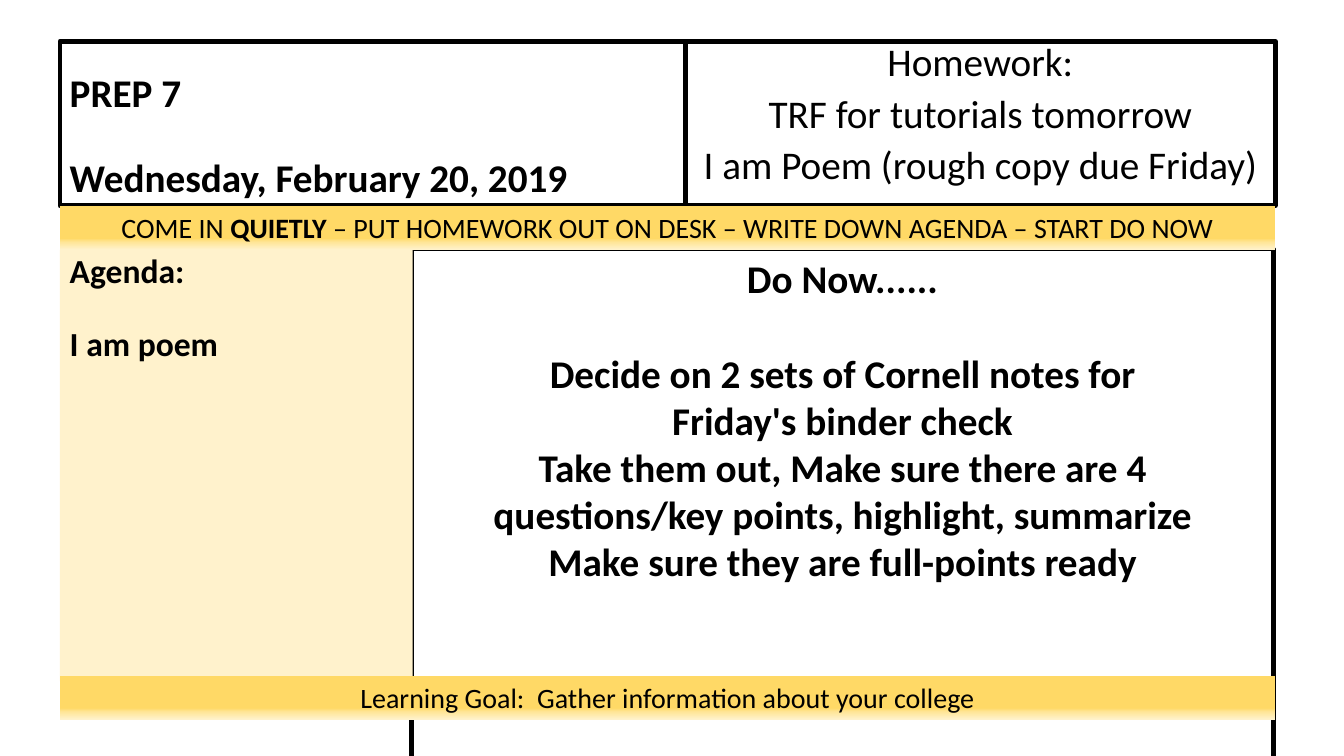
from lxml import etree
from pptx import Presentation
from pptx.dml.color import RGBColor
from pptx.enum.shapes import MSO_SHAPE
from pptx.enum.text import MSO_ANCHOR, PP_ALIGN
from pptx.oxml.ns import qn
from pptx.util import Pt

RECT = MSO_SHAPE.RECTANGLE
TOP, BOTTOM = MSO_ANCHOR.TOP, MSO_ANCHOR.BOTTOM
LEFT, CENTER = PP_ALIGN.LEFT, PP_ALIGN.CENTER
BLACK, CREAM = "000000", "FFF2CC"
GOLD_STOPS = [(0, "FFD966"), (74, "FFD966"), (83, "FFE699"), (100, CREAM)]


def color(hex_code):
    """Turn a hex string into a colour."""
    return RGBColor.from_string(hex_code)


def add_box(s, box, fill=None, border=0, anchor=TOP):
    """Draw a rectangle and return it with its text area ready."""
    sp = s.shapes.add_shape(RECT, *(Pt(v) for v in box))
    sp.shadow.inherit = False
    if fill:
        sp.fill.solid()
        sp.fill.fore_color.rgb = color(fill)
    else:
        sp.fill.background()
    if border:
        sp.line.color.rgb = color(BLACK)
        sp.line.width = Pt(border)
    else:
        sp.line.fill.background()
    sp.text_frame.word_wrap = True
    sp.text_frame.vertical_anchor = anchor
    return sp


def add_text(tf, text, size=28, bold=False, align=CENTER, spacing=1.0, before=0):
    """Add a paragraph, with *starred* words in bold."""
    p = tf.paragraphs[0]
    if p.runs:
        p = tf.add_paragraph()
    p.alignment, p.line_spacing, p.space_before = align, spacing, Pt(before)
    for i, part in enumerate(text.split("*")):
        r = p.add_run()
        r.text = part
        r.font.name, r.font.size = "Calibri", Pt(size)
        r.font.bold = bold or i % 2 == 1
        r.font.color.rgb = color(BLACK)


def fill_gold(sp):
    """Give a shape the gold fade from top to bottom."""
    sp.fill.gradient()
    sp.fill.gradient_angle = 270
    stops = sp.fill._xPr.find(qn("a:gradFill")).find(qn("a:gsLst"))
    for stop in list(stops):
        stops.remove(stop)
    for pos, hex_code in GOLD_STOPS:
        gs = etree.SubElement(stops, qn("a:gs"), pos=str(pos * 1000))
        etree.SubElement(gs, qn("a:srgbClr"), val=hex_code)


def add_header(s, x, y, w, h):
    """Place the class and date beside the homework list."""
    split = 446.75
    tf = add_box(s, (x, y, split, h), border=3.25, anchor=BOTTOM).text_frame
    add_text(tf, "PREP 7", bold=True, align=LEFT, spacing=0.9)
    add_text(tf, "Wednesday, February 20, 2019", bold=True, align=LEFT,
             spacing=0.9, before=30)
    tf = add_box(s, (x + split, y, w - split, h), border=3.25).text_frame
    homework = ["Homework:", "TRF for tutorials tomorrow",
                "I am Poem (rough copy due Friday)"]
    for i, text in enumerate(homework):
        add_text(tf, text, spacing=0.8, before=10 if i else 0)


def add_do_now(s, x, y, w, h):
    """Place the starting task."""
    tf = add_box(s, (x, y, w, h), border=3.25).text_frame
    add_text(tf, "Do Now......", bold=True)
    steps = ["Decide on 2 sets of Cornell notes for", "Friday's binder check",
             "Take them out, Make sure there are 4 questions/key points, "
             "highlight, summarize",
             "Make sure they are full-points ready"]
    for i, text in enumerate(steps):
        add_text(tf, text, bold=True, before=0 if i else 34)


def add_agenda(s, x, y, w, h):
    """Place the agenda column."""
    tf = add_box(s, (x, y, w, h), fill=CREAM).text_frame
    add_text(tf, "Agenda:", size=24, bold=True, align=LEFT, spacing=0.9)
    add_text(tf, "I am poem", size=24, bold=True, align=LEFT, spacing=0.9, before=26)


def add_banner(s, x, y, w, h, text):
    """Place a gold strip with one line of text."""
    sp = add_box(s, (x, y, w, h))
    fill_gold(sp)
    add_text(sp.text_frame, text, size=20)


def main():
    """Build and save the slide."""
    prs = Presentation()
    prs.slide_width, prs.slide_height = Pt(960), Pt(540)
    s = prs.slides.add_slide(prs.slide_layouts[6])
    x, w = 42.75, 868.25
    add_header(s, x, 29.5, w, 117.4)
    add_do_now(s, 294, 178, 615.5, 550)
    add_banner(s, x, 147, w, 31.5, "COME IN *QUIETLY* – PUT HOMEWORK OUT ON DESK – "
               "WRITE DOWN AGENDA – START DO NOW")
    add_agenda(s, x, 178.5, 252, 308)
    add_banner(s, x, 482.5, w, 31.5,
               "Learning Goal:  Gather information about your college")
    prs.save("out.pptx")


if __name__ == "__main__":
    main()
